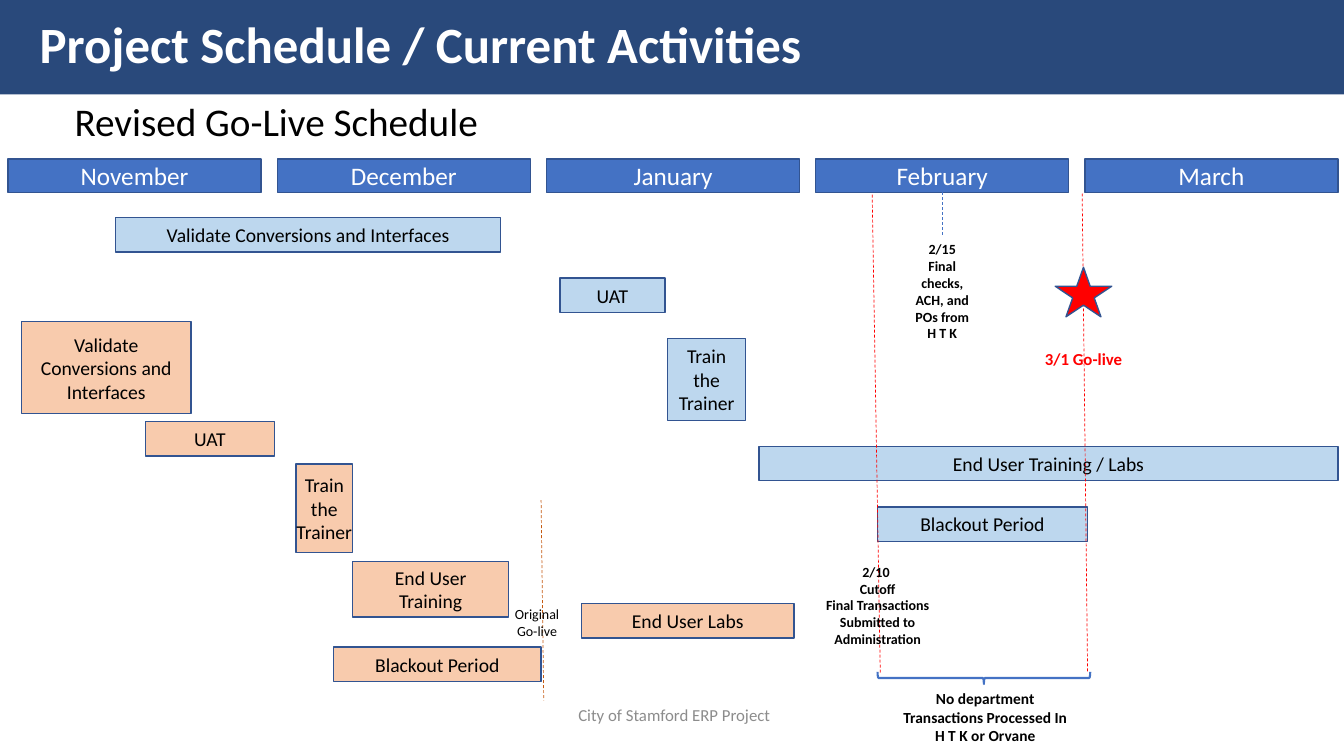
import pptx
import pptx.util
import pptx.dml.color
import pptx.enum.dml
import pptx.enum.shapes
import pptx.enum.text
import pptx.oxml.ns
import lxml.etree

# Places are (column, row, columns wide, rows high): a column is one month.
TITLE = ("Project Schedule / Current Activities", (0.08, -2.23, 4.31, 0.93))
SUB = ("Revised Go-Live Schedule", (0.21, -1.08, 1.6, 0.95))
FOOT = ("City of Stamford ERP Project", (1.63, 8.88, 1.69, 0.67))
MONTHS = ["November", "December", "January", "February", "March"]
REVISED = [
    ("Validate Conversions and Interfaces", (0.4, 1, 1.43, 0.57)),
    ("UAT", (2.05, 2, 0.39, 0.57)),
    ("Train the Trainer", (2.45, 3, 0.29, 1.35)),
    ("End User Training / Labs", (2.79, 4.78, 2.15, 0.57)),
    ("Blackout Period", (3.23, 5.78, 0.78, 0.57)),
]
FIRST = [
    ("Validate Conversions and Interfaces", (0.05, 2.72, 0.63, 1.52)),
    ("UAT", (0.51, 4.37, 0.48, 0.57)),
    ("Train\vthe\vTrainer", (1.07, 5.07, 0.21, 1.47)),
    ("End User Training", (1.28, 6.68, 0.58, 0.92)),
    ("Blackout Period", (1.21, 8.1, 0.77, 0.57)),
    ("End User Labs", (2.13, 7.38, 0.79, 0.57)),
]
CHECKS = ("2/15\nFinal checks, ACH, and POs from H T K", (3.32, 1.3, 0.3, 1.85))
NOTES = [
    ("2/10 \nCutoff\nFinal Transactions Submitted to Administration",
     (2.96, 6.63, 0.54, 1.57), dict(size="note", bold=True)),
    ("3/1 Go-live", (3.81, 3.08, 0.37, 0.5),
     dict(size="small", bold=True, color="red", wrap=False)),
    ("No department Transactions Processed In H T K or Orvane",
     (3.28, 8.72, 0.7, 1.1), dict(size="foot", bold=True)),
    ("Original Go-live", (1.82, 7.33, 0.29, 0.73), dict(size="note")),
]
DATES = [
    ((3.21, 0.62), (3.24, 8.52), "red"),
    ((3.99, 0.6), (4.01, 8.5), "red"),
    ((1.98, 5.67), (1.99, 8.98), "rust"),
]
STAR = (3.89, 1.82, 0.21, 0.82)
BRACE = (3.23, 8.51, 0.79, 0.2)

THEME = dict(
    font="Calibri",
    band="29497B", blue="4472C4", edge="325491", sky="BDD7EE", peach="F8CBAD",
    red="FF0000", rust="C55A11", black="000000", white="FFFFFF", gray="8C8C8C",
    sizes=dict(title=36.3, sub=28, month=18, bar=14, small=12, foot=11, note=10),
)
WIDE, HIGH = 13.33, 7.5
LEFT, TOP, COL, ROW = 0.08, 1.56, 2.67, 0.6
KIND = pptx.enum.shapes.MSO_SHAPE
ALIGN = pptx.enum.text.PP_ALIGN
ANCHOR = pptx.enum.text.MSO_ANCHOR
inch = pptx.util.Inches

deck = pptx.Presentation()
deck.slide_width, deck.slide_height = inch(WIDE), inch(HIGH)
slide = deck.slides.add_slide(deck.slide_layouts[5])
shapes = slide.shapes


def tint(name):
    return pptx.dml.color.RGBColor.from_string(THEME[name])


def spot(col, row):
    return inch(LEFT + col * COL), inch(TOP + row * ROW)


def area(place):
    col, row, cols, rows = place
    return *spot(col, row), inch(cols * COL), inch(rows * ROW)


def write(shape, text, size="bar", color="black", bold=False, wrap=True,
          align=ALIGN.CENTER, anchor=ANCHOR.MIDDLE, pad=0.05, space=None):
    frame = shape.text_frame
    frame.auto_size = pptx.enum.text.MSO_AUTO_SIZE.NONE
    frame.word_wrap, frame.vertical_anchor = wrap, anchor
    frame.margin_left = frame.margin_right = inch(0.1)
    frame.margin_top = frame.margin_bottom = inch(pad)
    frame.text = text
    for para in frame.paragraphs:
        para.alignment = align
        if space:
            para.line_spacing = space
        for run in para.runs:
            font = run.font
            font.name, font.bold = THEME["font"], bold
            font.size = pptx.util.Pt(THEME["sizes"][size])
            font.color.rgb = tint(color)


def draw(kind, box, fill=None, line="edge", width=1):
    shape = shapes.add_shape(kind, *box)
    shape.shadow.inherit = False
    if fill:
        shape.fill.solid()
        shape.fill.fore_color.rgb = tint(fill)
    else:
        shape.fill.background()
    if line:
        shape.line.color.rgb = tint(line)
        shape.line.width = pptx.util.Pt(width)
    else:
        shape.line.fill.background()
    return shape


def note(text, place, **style):
    box = shapes.add_textbox(*area(place))
    write(box, text, **{"anchor": ANCHOR.TOP, **style})
    return box


def dash(start, end, color):
    link = shapes.add_connector(
        pptx.enum.shapes.MSO_CONNECTOR.STRAIGHT, *spot(*start), *spot(*end))
    link.line.color.rgb = tint(color)
    link.line.width = pptx.util.Pt(0.5)
    link.line.dash_style = pptx.enum.dml.MSO_LINE.DASH
    lxml.etree.SubElement(link._element.spPr, pptx.oxml.ns.qn("a:effectLst"))
    return link


def main():
    title = shapes.title
    title.left, title.top, title.width, title.height = area(TITLE[1])
    write(title, TITLE[0], size="title", color="white", bold=True,
          align=ALIGN.LEFT, space=0.7)
    band = draw(KIND.RECTANGLE, (0, 0, inch(WIDE), inch(HIGH / 8)), "band", None)
    title._element.addprevious(band._element)
    note(*SUB, size="sub", wrap=False, align=ALIGN.LEFT)
    note(*FOOT, size="small", color="gray", anchor=ANCHOR.MIDDLE)

    heads = {}
    for col, month in enumerate(MONTHS):
        head = draw(KIND.RECTANGLE, area((col, 0.03, 0.94, 0.55)), "blue")
        write(head, month, size="month", color="white", pad=0)
        heads[month] = head

    for plan, fill in ((REVISED, "sky"), (FIRST, "peach")):
        for text, place in plan:
            bar = draw(KIND.RECTANGLE, area(place), fill)
            write(bar, text, pad=0, wrap="\v" not in text)

    for start, end, color in DATES:
        dash(start, end, color)
    for text, place, style in NOTES:
        note(text, place, **style)
    checks = note(*CHECKS, size="note", bold=True)
    link = dash((3.47, 0.6), (3.47, 1.3), "blue")
    link.begin_connect(heads["February"], 2)
    link.end_connect(checks, 0)

    draw(KIND.STAR_5_POINT, area(STAR), "red")
    x, y, long, thin = area(BRACE)
    turned = (x + (long - thin) // 2, y + (thin - long) // 2, thin, long)
    brace = draw(KIND.LEFT_BRACE, turned, line="blue", width=1.5)
    brace.rotation = 270
    deck.save("out.pptx")


if __name__ == "__main__":
    main()
